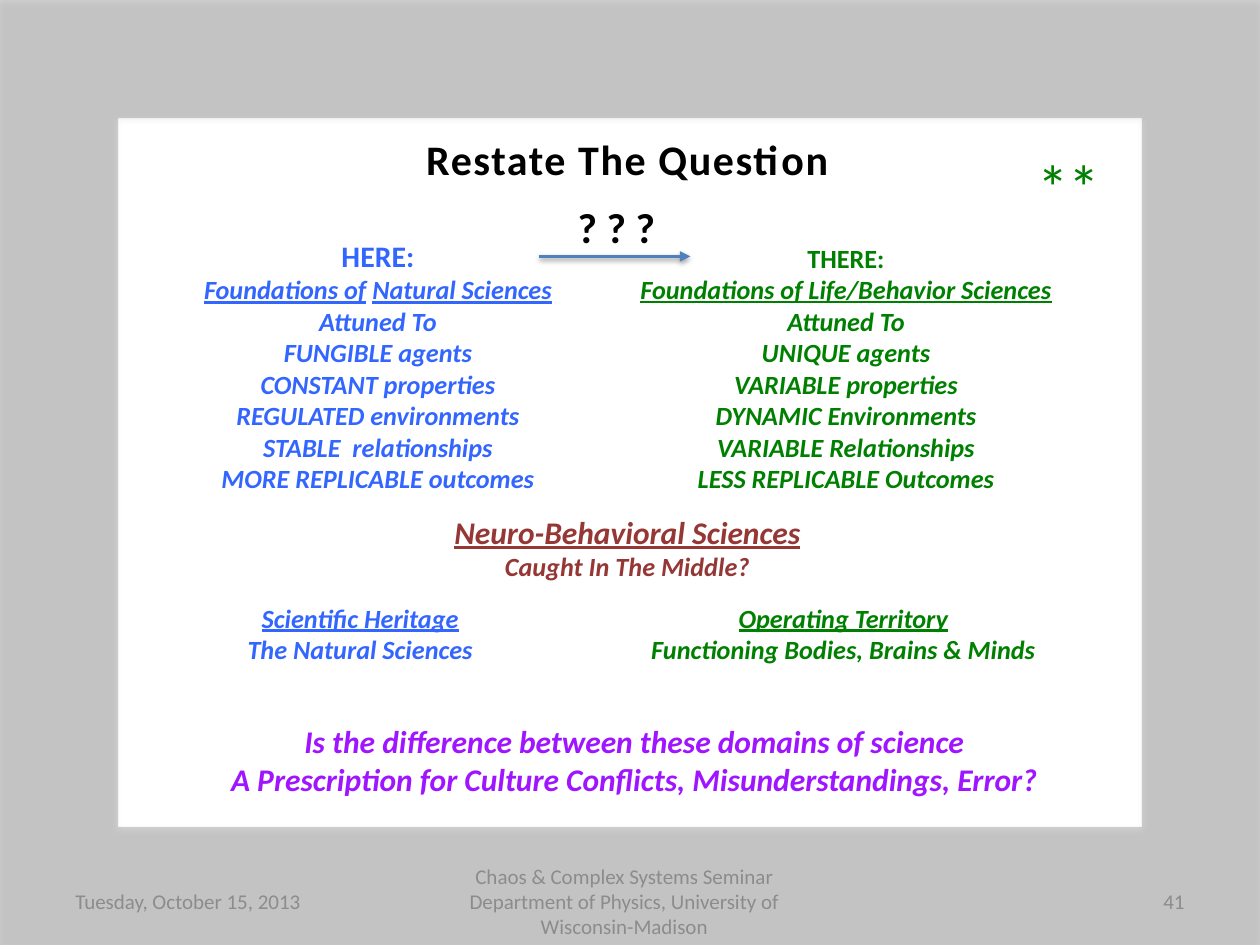
import pptx
import pptx.util
import pptx.dml.color
import pptx.enum.shapes
import pptx.enum.text
import pptx.oxml
import pptx.oxml.ns
from collections import namedtuple

Box = namedtuple("Box", "left top width height")
COLUMNS, ROWS = 100, 75
CELL = pptx.util.Inches(0.1)
COLORS = {"black": "000000", "blue": "3366FF", "green": "008000", "brown": "953735",
          "violet": "A015FF", "gray": "8C8C8C", "arrow": "4F81BD"}
ALIGN = pptx.enum.text.PP_ALIGN
ANCHOR = pptx.enum.text.MSO_ANCHOR
NAMESPACE = pptx.oxml.ns.nsdecls("a")


def cells(*counts):
    return [round(count * CELL) for count in counts]


def part(box, left, top, width, height):
    return Box(box.left + left * box.width, box.top + top * box.height,
               width * box.width, height * box.height)


def color(name):
    return pptx.dml.color.RGBColor.from_string(COLORS[name])


def style(font, size, name, bold=True, italic=False, underline=False):
    font.name = "Calibri"
    font.size = pptx.util.Pt(size)
    font.color.rgb = color(name)
    font.bold, font.italic, font.underline = bold, italic, underline


def write(frame, lines, align=ALIGN.CENTER, anchor=ANCHOR.TOP, wrap=True):
    frame.word_wrap = wrap
    frame.auto_size = pptx.enum.text.MSO_AUTO_SIZE.NONE
    frame.vertical_anchor = anchor
    for index, (text, look) in enumerate(lines):
        para = frame.paragraphs[0] if index == 0 else frame.add_paragraph()
        para.alignment = align
        style(para.font, **look)
        for piece in [text] if isinstance(text, str) else text:
            span = para.add_run()
            span.text = piece
            if piece == " ":
                span.font.underline = False


def add_text(page, box, lines, **options):
    shape = page.shapes.add_textbox(*cells(*box))
    write(shape.text_frame, lines, **options)


def add_shadow(shape, opacity, blur, distance):
    properties = shape._element.spPr
    for old in properties.findall(pptx.oxml.ns.qn("a:effectLst")):
        properties.remove(old)
    properties.append(pptx.oxml.parse_xml(
        f'<a:effectLst {NAMESPACE}><a:outerShdw blurRad="{pptx.util.Pt(blur)}" '
        f'dist="{pptx.util.Pt(distance)}" dir="5400000" rotWithShape="0">'
        f'<a:srgbClr val="{COLORS["black"]}"><a:alpha val="{opacity * 1000}"/>'
        '</a:srgbClr></a:outerShdw></a:effectLst>'))


def add_border(page, box):
    border = page.shapes.add_shape(pptx.enum.shapes.MSO_SHAPE.FRAME, *cells(*box))
    border.fill.solid()
    border.fill.fore_color.rgb = color("black")
    border.line.fill.background()
    fill_color = border._element.spPr.find(".//" + pptx.oxml.ns.qn("a:srgbClr"))
    fill_color.append(pptx.oxml.parse_xml(f'<a:alpha {NAMESPACE} val="18000"/>'))
    add_shadow(border, 35, 3.1, 1.8)


def add_footer(page, box):
    look = dict(size=12, name="gray", bold=False)
    items = [
        (0, 0.26, "Tuesday, October 15, 2013", ALIGN.LEFT),
        (0.32, 0.35, "Chaos & Complex Systems Seminar Department of Physics, "
                     "University of Wisconsin-Madison", ALIGN.CENTER),
        (0.74, 0.26, "41", ALIGN.RIGHT),
    ]
    for left, width, text, align in items:
        add_text(page, part(box, left, 0, width, 1), [(text, look)],
                 align=align, anchor=ANCHOR.MIDDLE)


def add_heading(page, box):
    title = page.shapes.title
    title.left, title.top, title.width, title.height = cells(*box)
    write(title.text_frame, [("Restate The Question", dict(size=24, name="black"))])
    title.text_frame.paragraphs[0].runs[0]._r.get_or_add_rPr().set("spc", "90")
    add_text(page, part(box, 0.9, 0.22, 0.09, 1.42),
             [("**", dict(size=36, name="green", bold=False))],
             align=ALIGN.LEFT, wrap=False)


def add_domain(page, box, name, head, head_size, topic, traits):
    look = dict(size=15, name=name, italic=True)
    lines = [(head, dict(size=head_size, name=name)),
             (topic, dict(look, underline=True))]
    add_text(page, box, lines + [(trait, look) for trait in traits])


def add_arrow(page, box):
    left, top, width, height = box
    arrow = page.shapes.add_connector(
        pptx.enum.shapes.MSO_CONNECTOR.STRAIGHT,
        *cells(left, top + height, left + width, top + height))
    arrow.line.color.rgb = color("arrow")
    arrow.line.width = pptx.util.Pt(2)
    arrow.line._get_or_add_ln().append(
        pptx.oxml.parse_xml(f'<a:tailEnd {NAMESPACE} type="triangle"/>'))
    add_shadow(arrow, 38, 3.1, 1.6)
    add_text(page, part(box, 0.17, 0, 0.68, 1.04),
             [("? ? ?", dict(size=24, name="black"))], wrap=False)


def add_middle(page, box):
    look = dict(size=15, italic=True)
    add_text(page, part(box, 0, 0, 1, 0.52), [
        ("Neuro-Behavioral Sciences",
         dict(size=18, name="brown", italic=True, underline=True)),
        ("Caught In The Middle?", dict(look, name="brown")),
    ])
    sides = [
        (0.04, "blue", "Scientific Heritage", "The Natural Sciences"),
        (0.51, "green", "Operating Territory", "Functioning Bodies, Brains & Minds"),
    ]
    for left, name, head, text in sides:
        add_text(page, part(box, left, 0.52, 0.4, 0.48), [
            (head, dict(look, name=name, underline=True)),
            (text, dict(look, name=name)),
        ])


def add_closing(page, box):
    look = dict(size=18, name="violet", italic=True)
    add_text(page, box, [
        ("Is the difference between these domains of science", look),
        ("A Prescription for Culture Conflicts, Misunderstandings, Error?", look),
    ])


def main():
    deck = pptx.Presentation()
    deck.slide_width, deck.slide_height = cells(COLUMNS, ROWS)
    page = deck.slides.add_slide(deck.slide_layouts[5])
    add_border(page, Box(0, 0, COLUMNS, ROWS))
    add_footer(page, Box(5, 69.5, 90, 4))
    add_heading(page, Box(10.4, 10.1, 78.8, 5))
    add_domain(page, Box(11.2, 18.4, 37.6, 24.3), "blue", "HERE:", 17,
               ["Foundations of", " ", "Natural Sciences"],
               ["Attuned To", "FUNGIBLE agents", "CONSTANT properties",
                "REGULATED environments", "STABLE  relationships",
                "MORE REPLICABLE outcomes"])
    add_domain(page, Box(48.8, 18.7, 36.7, 21.3), "green", "THERE:", 15,
               "Foundations of Life/Behavior Sciences",
               ["Attuned To", "UNIQUE agents", "VARIABLE properties",
                "DYNAMIC Environments", "VARIABLE Relationships",
                "LESS REPLICABLE Outcomes"])
    add_middle(page, Box(9, 40.2, 81.6, 13.6))
    add_closing(page, Box(11.2, 56.8, 78.3, 7))
    add_arrow(page, Box(42.8, 15.5, 12, 4.85))
    deck.save("out.pptx")


if __name__ == "__main__":
    main()
